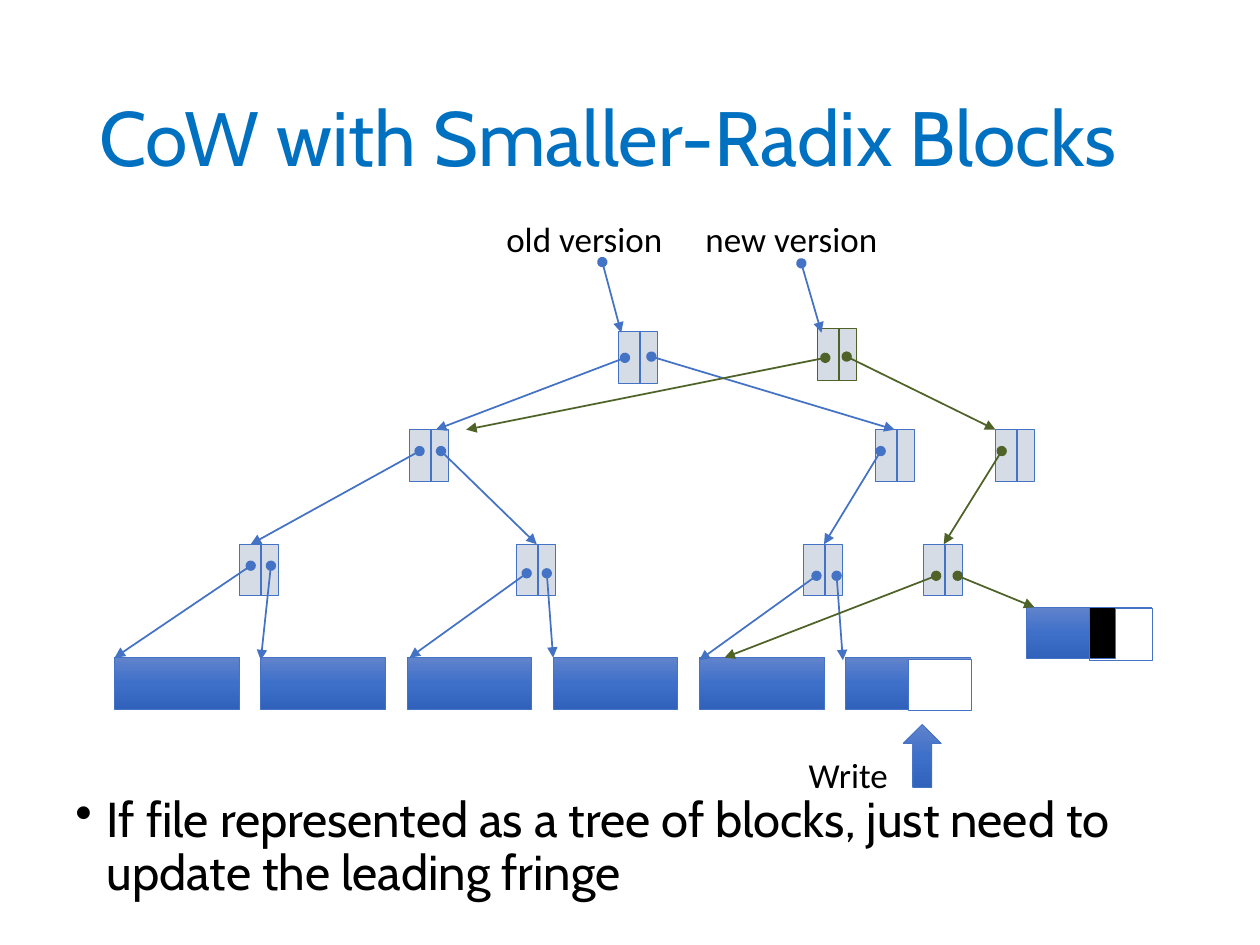
"""Draw a copy-on-write block tree whose old and new versions share blocks."""
from copy import deepcopy
from typing import NamedTuple, Optional

from lxml.etree import SubElement
from pptx import Presentation
from pptx.dml.color import RGBColor
from pptx.enum.shapes import MSO_CONNECTOR as Connector, MSO_SHAPE as Shape
from pptx.enum.text import MSO_ANCHOR as Anchor
from pptx.oxml.ns import qn
from pptx.util import Emu, Pt

PX = 9144
BLUE = RGBColor(0x44, 0x72, 0xC4)
GREEN = RGBColor(0x4F, 0x62, 0x28)
PALE = RGBColor(0xD6, 0xDC, 0xE5)
WHITE = RGBColor(0xFF, 0xFF, 0xFF)
BLACK = RGBColor(0x00, 0x00, 0x00)
TITLE_BLUE = RGBColor(0x00, 0x70, 0xC0)
GRADIENT = (
    (0, RGBColor(0x61, 0x83, 0xCB)),
    (0.5, RGBColor(0x3E, 0x70, 0xCA)),
    (1, RGBColor(0x30, 0x62, 0xBB)),
)
BLOCK_WIDTH, BLOCK_HEIGHT = 99, 41
BLOCK_LEFT, BLOCK_TOP, BLOCK_STEP, BLOCK_COUNT = 91, 522, 116, 6
NODE_WIDTH, NODE_HEIGHT, NODE_DIVIDER = 31, 41, 17


class Box(NamedTuple):
    left: int
    top: int
    width: int
    height: int
    fill: Optional[RGBColor] = None
    kind: Shape = Shape.RECTANGLE


class Node(NamedTuple):
    left: int
    top: int
    color: RGBColor = BLUE


class Pointer(NamedTuple):
    x1: int
    y1: int
    x2: int
    y2: int
    color: RGBColor = BLUE


class Label(NamedTuple):
    text: str
    left: int
    top: int
    width: int
    height: int
    size: int = 20
    font: str = "Calibri"
    color: RGBColor = BLACK
    wrap: bool = False


TITLE = Label("CoW with Smaller-Radix Blocks", 69, 40, 862, 145, 44, "Cabin", TITLE_BLUE, True)
BODY = Label(
    "If file represented as a tree of blocks, just need to update the leading fringe",
    50, 626, 900, 143, 28, "Cabin", BLACK, True,
)
LABELS = (
    Label("Write", 632, 593, 97, 44),
    Label("old version", 392, 168, 147, 44),
    Label("new version", 550, 168, 158, 44),
)
BLOCKS = tuple(
    Box(BLOCK_LEFT + index * BLOCK_STEP, BLOCK_TOP, BLOCK_WIDTH, BLOCK_HEIGHT)
    for index in range(BLOCK_COUNT)
)
BOXES = BLOCKS + (
    Box(721, 523, 50, BLOCK_HEIGHT, WHITE),
    Box(717, 575, 30, 50, kind=Shape.UP_ARROW),
    Box(815, 482, BLOCK_WIDTH, BLOCK_HEIGHT),
    Box(865, 483, 50, BLOCK_HEIGHT, WHITE),
    Box(865, 482, 20, BLOCK_HEIGHT, BLACK),
)
NODES = (
    Node(491, 263),
    Node(649, 261, GREEN),
    Node(325, 341),
    Node(695, 341),
    Node(790, 341),
    Node(190, 432),
    Node(410, 432),
    Node(638, 432),
    Node(733, 432),
)
POINTERS = (
    Pointer(478, 208, 493, 264),
    Pointer(636, 209, 652, 264),
    Pointer(496, 284, 346, 341),
    Pointer(517, 283, 710, 341),
    Pointer(333, 358, 199, 432),
    Pointer(350, 358, 426, 432),
    Pointer(699, 358, 654, 432),
    Pointer(199, 449, 91, 522),
    Pointer(215, 449, 207, 524),
    Pointer(418, 455, 325, 522),
    Pointer(434, 455, 439, 522),
    Pointer(648, 457, 555, 524),
    Pointer(664, 457, 669, 524),
    Pointer(655, 284, 370, 341, GREEN),
    Pointer(672, 283, 790, 341, GREEN),
    Pointer(795, 358, 749, 432, GREEN),
    Pointer(743, 457, 575, 522, GREEN),
    Pointer(760, 457, 821, 482, GREEN),
)


def px(*lengths: int) -> list[Emu]:
    """Turn px lengths into EMU."""
    return [Emu(length * PX) for length in lengths]


def draw_box(slide, box: Box, outline: RGBColor = BLUE) -> None:
    """Draw an outlined shape, with the blue gradient unless a fill is given."""
    shape = slide.shapes.add_shape(box.kind, *px(box.left, box.top, box.width, box.height))
    shape.shadow.inherit = False
    shape.line.color.rgb = outline
    shape.line.width = Pt(0.5)
    if box.fill is not None:
        shape.fill.solid()
        shape.fill.fore_color.rgb = box.fill
        return
    shape.fill.gradient()
    shape.fill.gradient_angle = 270
    stop_list = shape._element.spPr.find(".//" + qn("a:gsLst"))
    stop_list.insert(1, deepcopy(stop_list[0]))
    for stop, (position, color) in zip(shape.fill.gradient_stops, GRADIENT):
        stop.position = position
        stop.color.rgb = color


def draw_line(slide, pointer: Pointer, ends: bool = True) -> None:
    """Draw a line, with a dot at its start and an arrowhead at its end if asked."""
    line = slide.shapes.add_connector(Connector.STRAIGHT, *px(*pointer[:4]))
    line.line.color.rgb = pointer.color
    line.line.width = Pt(1)
    properties = line._element.spPr
    if ends:
        outline = properties.find(qn("a:ln"))
        SubElement(outline, qn("a:headEnd"), type="oval")
        SubElement(outline, qn("a:tailEnd"), type="triangle")
    SubElement(properties, qn("a:effectLst"))


def draw_node(slide, node: Node) -> None:
    """Draw an index node split into two pointer slots."""
    draw_box(slide, Box(node.left, node.top, NODE_WIDTH, NODE_HEIGHT, PALE), node.color)
    middle = node.left + NODE_DIVIDER
    divider = Pointer(middle, node.top, middle, node.top + NODE_HEIGHT, node.color)
    draw_line(slide, divider, ends=False)


def draw_label(slide, label: Label):
    """Draw a text box and return its text frame."""
    box = slide.shapes.add_textbox(*px(label.left, label.top, label.width, label.height))
    frame = box.text_frame
    frame.word_wrap = label.wrap
    para = frame.paragraphs[0]
    para.text = label.text
    para.font.size = Pt(label.size)
    para.font.name = label.font
    para.font.color.rgb = label.color
    return frame


def main() -> None:
    """Build and save the slide."""
    deck = Presentation()
    deck.slide_width, deck.slide_height = px(1000, 750)
    slide = deck.slides.add_slide(deck.slide_layouts[6])
    title = draw_label(slide, TITLE)
    title.vertical_anchor = Anchor.MIDDLE
    title.paragraphs[0].line_spacing = 0.9
    bullet = draw_label(slide, BODY).paragraphs[0]
    bullet.line_spacing = 0.9
    bullet.space_before = Pt(10)
    properties = bullet._p.get_or_add_pPr()
    properties.set("marL", str(25 * PX))
    properties.set("indent", str(-25 * PX))
    mark = properties.makeelement(qn("a:buChar"), {"char": "•"})
    properties.find(qn("a:spcBef")).addnext(mark)
    for box in BOXES:
        draw_box(slide, box)
    for node in NODES:
        draw_node(slide, node)
    for pointer in POINTERS:
        draw_line(slide, pointer)
    for label in LABELS:
        draw_label(slide, label)
    deck.save("out.pptx")


if __name__ == "__main__":
    main()
